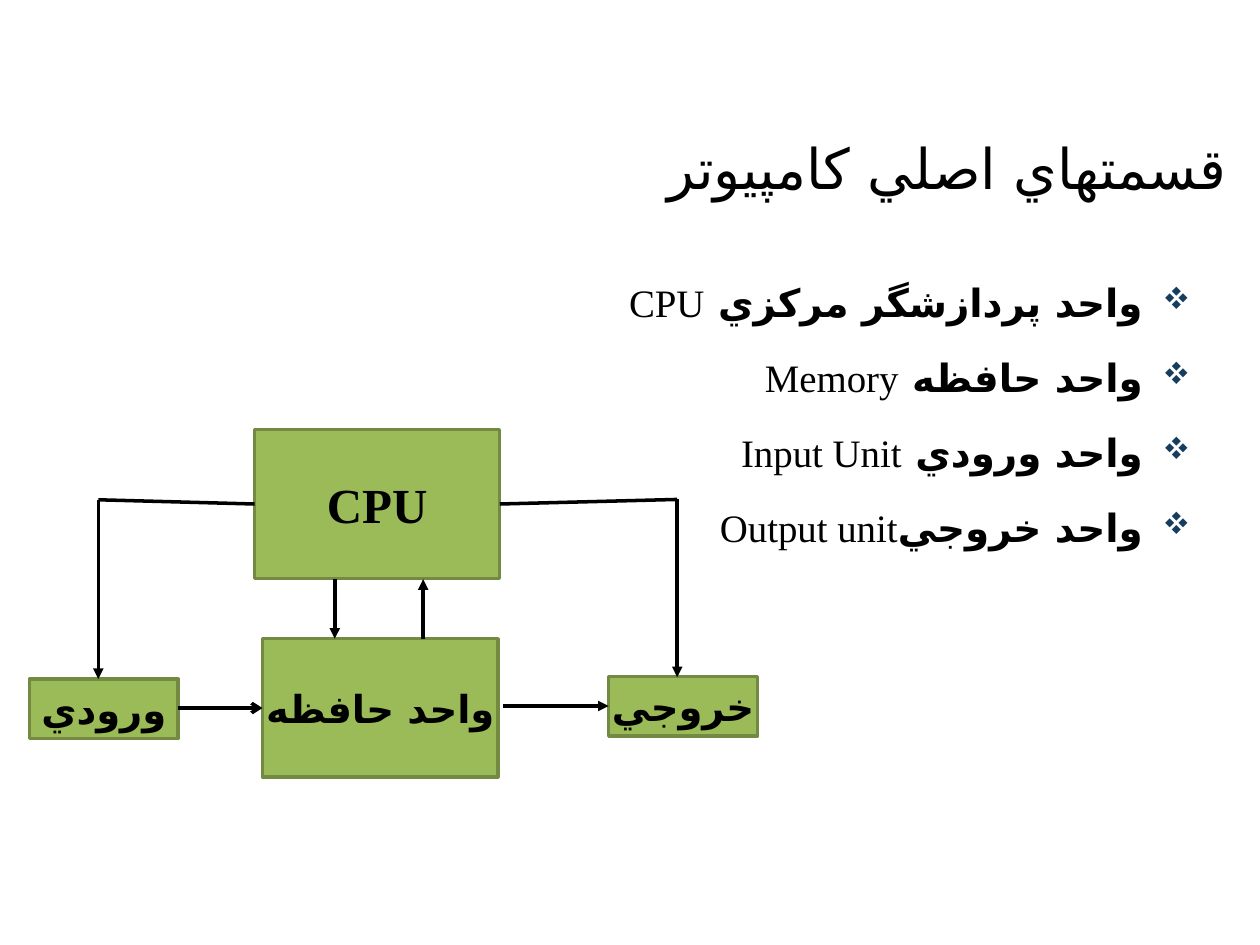
from lxml import etree
from pptx import Presentation
from pptx.dml.color import RGBColor
from pptx.enum.shapes import MSO_CONNECTOR, MSO_SHAPE
from pptx.enum.text import MSO_ANCHOR, PP_ALIGN
from pptx.oxml.ns import qn
from pptx.util import Pt

RIGHT, CENTER = PP_ALIGN.RIGHT, PP_ALIGN.CENTER
TOP, MIDDLE = MSO_ANCHOR.TOP, MSO_ANCHOR.MIDDLE
RECTANGLE, STRAIGHT = MSO_SHAPE.RECTANGLE, MSO_CONNECTOR.STRAIGHT

BLACK = RGBColor(0x00, 0x00, 0x00)
GREEN = RGBColor(0x9B, 0xBB, 0x59)
DARK_GREEN = RGBColor(0x73, 0x8A, 0x42)
BULLET_BLUE = RGBColor(0x16, 0x3C, 0x5E)
PERSIAN_FONT, LATIN_FONT = "Calibri", "Times New Roman"
ARABIC_SCRIPT_FONT = "DejaVu Sans"  # Calibri has no Arabic letters
INDENT = 27.36

# Content; all positions in points
TITLE = "قسمتهاي اصلي كامپيوتر"
TITLE_BOX = (60.5, 50.4, 648, 90)
UNITS = [
    ("واحد پردازشگر مركزي ", "CPU"),
    ("واحد حافظه ", "Memory"),
    ("واحد ورودي ", "Input Unit"),
    ("واحد خروجي", "Output unit"),
]
UNITS_BOX = (39.6, 145.2, 648, 186)
BLOCKS = [  # label, font, size, (left, top, width, height)
    ("CPU", LATIN_FONT, 28, (145.5, 245.5, 140, 85)),
    ("خروجي", PERSIAN_FONT, 22, (347.8, 386.6, 85, 34)),
    ("واحد حافظه", PERSIAN_FONT, 22, (150, 365, 134.6, 79)),
    ("ورودي", PERSIAN_FONT, 22, (16.8, 388, 85, 34)),
]
LINES = [  # start, end, arrowhead
    ((287.3, 403.4), (347.8, 403.4), "triangle"),  # memory to output
    ((241.8, 365), (241.8, 331), "triangle"),      # memory to CPU
    ((191.3, 331), (191.3, 365), "triangle"),      # CPU to memory
    ((56.2, 285.6), (56.2, 388), "triangle"),      # down to input
    ((387, 285.4), (387, 387), "triangle"),        # down to output
    ((56.2, 285.6), (145.5, 288), None),           # CPU, left side
    ((285.6, 288), (387, 285.4), None),            # CPU, right side
    ((102, 404.6), (150, 404.6), "arrow"),         # input to memory
]


def points(values):
    return [Pt(value) for value in values]


def format_run(run, font_name, size, bold):
    font = run.font
    font.name, font.size, font.bold = font_name, Pt(size), bold
    font.color.rgb = BLACK
    complex_font = etree.SubElement(font._element, qn("a:cs"))
    complex_font.set("typeface", ARABIC_SCRIPT_FONT)


def set_right_to_left(paragraph, alignment):
    paragraph.alignment = alignment
    properties = paragraph._p.get_or_add_pPr()
    properties.set("rtl", "1")
    return properties


def add_bullet(properties):
    properties.set("marL", str(Pt(INDENT)))
    properties.set("marR", "0")
    properties.set("indent", str(-Pt(INDENT)))
    color = etree.SubElement(properties, qn("a:buClr"))
    etree.SubElement(color, qn("a:srgbClr")).set("val", str(BULLET_BLUE))
    etree.SubElement(properties, qn("a:buSzPct")).set("val", "80000")
    bullet_font = etree.SubElement(properties, qn("a:buFont"))
    bullet_font.set("typeface", "Wingdings")
    bullet_font.set("charset", "2")
    # "v" is the four-diamond sign in Wingdings
    etree.SubElement(properties, qn("a:buChar")).set("char", "v")


def add_text_box(slide, box, anchor):
    text_frame = slide.shapes.add_textbox(*points(box)).text_frame
    text_frame.word_wrap = True
    text_frame.vertical_anchor = anchor
    return text_frame


def add_block(slide, label, font_name, size, box):
    shape = slide.shapes.add_shape(RECTANGLE, *points(box))
    shape.shadow.inherit = False
    shape.fill.solid()
    shape.fill.fore_color.rgb = GREEN
    shape.line.color.rgb = DARK_GREEN
    shape.line.width = Pt(2)
    text_frame = shape.text_frame
    text_frame.word_wrap = False
    text_frame.vertical_anchor = MIDDLE
    text_frame.text = label
    paragraph = text_frame.paragraphs[0]
    set_right_to_left(paragraph, CENTER)
    format_run(paragraph.runs[0], font_name, size, True)


def add_line(slide, start, end, arrowhead):
    connector = slide.shapes.add_connector(STRAIGHT, *points(start + end))
    connector.line.color.rgb = BLACK
    connector.line.width = Pt(2)
    if arrowhead:
        line = connector.line._get_or_add_ln()
        etree.SubElement(line, qn("a:tailEnd")).set("type", arrowhead)
    etree.SubElement(connector._element.spPr, qn("a:effectLst"))


def main():
    presentation = Presentation()
    presentation.slide_width, presentation.slide_height = Pt(720), Pt(540)
    slide = presentation.slides.add_slide(presentation.slide_layouts[6])

    # Title
    text_frame = add_text_box(slide, TITLE_BOX, MIDDLE)
    text_frame.text = TITLE
    paragraph = text_frame.paragraphs[0]
    set_right_to_left(paragraph, RIGHT)
    format_run(paragraph.runs[0], PERSIAN_FONT, 32, False)

    # List of units
    text_frame = add_text_box(slide, UNITS_BOX, TOP)
    for index, (persian, latin) in enumerate(UNITS):
        paragraph = text_frame.add_paragraph() if index else text_frame.paragraphs[0]
        add_bullet(set_right_to_left(paragraph, RIGHT))
        paragraph.line_spacing = 1.4
        paragraph.space_before = Pt(5.5 if index else 0)
        for text, font_name, bold in ((persian, PERSIAN_FONT, True),
                                      (latin, LATIN_FONT, False)):
            run = paragraph.add_run()
            run.text = text
            format_run(run, font_name, 22.2, bold)

    # Block diagram
    for block in BLOCKS:
        add_block(slide, *block)
    for line in LINES:
        add_line(slide, *line)

    presentation.save("out.pptx")


if __name__ == "__main__":
    main()
